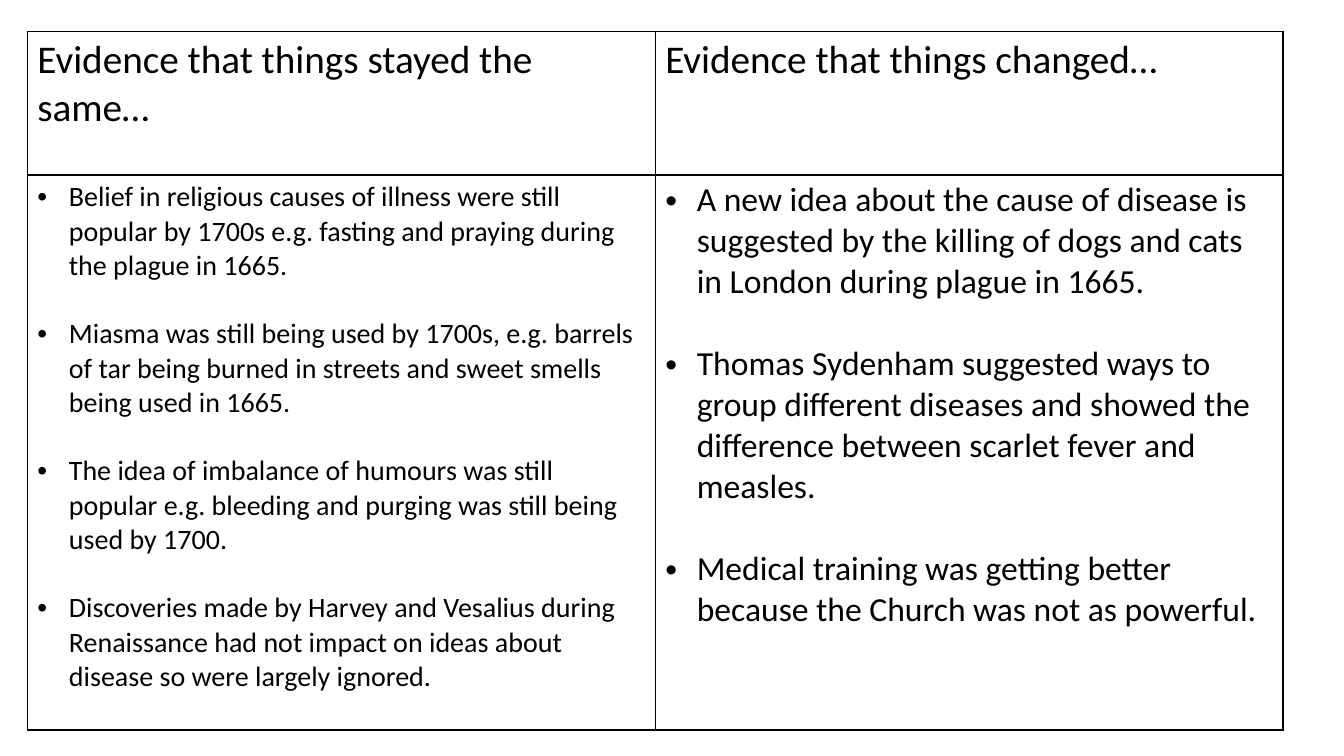
import lxml.etree
import pptx
import pptx.dml.color
import pptx.oxml.ns
import pptx.util

Pt = pptx.util.Pt

HEADINGS = ["Evidence that things stayed the same…", "Evidence that things changed…"]
STAYED_SAME = [
    "Belief in religious causes of illness were still popular by 1700s e.g. "
    "fasting and praying during the plague in 1665.",
    "Miasma was still being used by 1700s, e.g. barrels of tar being burned in "
    "streets and sweet smells being used in 1665.",
    "The idea of imbalance of humours was still popular e.g. bleeding and "
    "purging was still being used by 1700.",
    "Discoveries made by Harvey and Vesalius during Renaissance had not impact "
    "on ideas about disease so were largely ignored.",
]
CHANGED = [
    "A new idea about the cause of disease is suggested by the killing of dogs "
    "and cats in London during plague in 1665.",
    "Thomas Sydenham suggested ways to group different diseases and showed the "
    "difference between scarlet fever and measles.",
    "Medical training was getting better because the Church was not as powerful.",
]


def color(value):
    return pptx.dml.color.RGBColor.from_string(value)


def add_xml(parent, tag, **attributes):
    return lxml.etree.SubElement(parent, pptx.oxml.ns.qn(tag), attributes)


class EvidencePage:
    FONT = "Calibri"
    INK = "000000"
    LINE_HEIGHT = 1.22
    INDENT = 22.5

    def __init__(self, deck):
        self.page = deck.slides.add_slide(deck.slide_layouts[6])

    def table(self, left, top, column_widths, row_heights):
        """Add an unstyled table with a thin border round every cell."""
        frame = self.page.shapes.add_table(
            len(row_heights), len(column_widths), Pt(left), Pt(top),
            Pt(sum(column_widths)), Pt(sum(row_heights)))
        table = frame.table
        table.first_row = table.horz_banding = False
        for column, width in zip(table.columns, column_widths):
            column.width = Pt(width)
        for row, height in zip(table.rows, row_heights):
            row.height = Pt(height)
        for cell in table.iter_cells():
            self.border(cell)
            cell.fill.background()
        return table

    def border(self, cell):
        properties = cell._tc.get_or_add_tcPr()
        for side in ("L", "R", "T", "B"):
            line = add_xml(properties, f"a:ln{side}", w=str(Pt(1)))
            add_xml(add_xml(line, "a:solidFill"), "a:srgbClr", val=self.INK)

    def text(self, para, words, size):
        span = para.add_run()
        span.text = words
        span.font.color.rgb = color(self.INK)
        for name, value in {"name": self.FONT, "size": Pt(size), "bold": False}.items():
            setattr(span.font, name, value)

    def bullets(self, cell, points, size):
        """Fill a cell with bulleted points, one line of space between them."""
        box = cell.text_frame
        for index, point in enumerate(points):
            para = box.add_paragraph() if index else box.paragraphs[0]
            properties = para._p.get_or_add_pPr()
            properties.set("marL", str(Pt(self.INDENT)))
            properties.set("indent", str(-Pt(self.INDENT)))
            add_xml(properties, "a:buFont", typeface="Arial")
            add_xml(properties, "a:buChar", char="•")
            if index:
                para.space_before = Pt(size * self.LINE_HEIGHT)
            self.text(para, point, size)


def main():
    deck = pptx.Presentation()
    deck.slide_width, deck.slide_height = Pt(960), Pt(540)
    evidence = EvidencePage(deck)
    table = evidence.table(19.5, 22.5, [448.5, 448.5], [102.5, 396.5])
    for column, heading in enumerate(HEADINGS):
        evidence.text(table.cell(0, column).text_frame.paragraphs[0], heading, 28)
    evidence.bullets(table.cell(1, 0), STAYED_SAME, 20)
    evidence.bullets(table.cell(1, 1), CHANGED, 24)
    deck.save("out.pptx")


if __name__ == "__main__":
    main()
